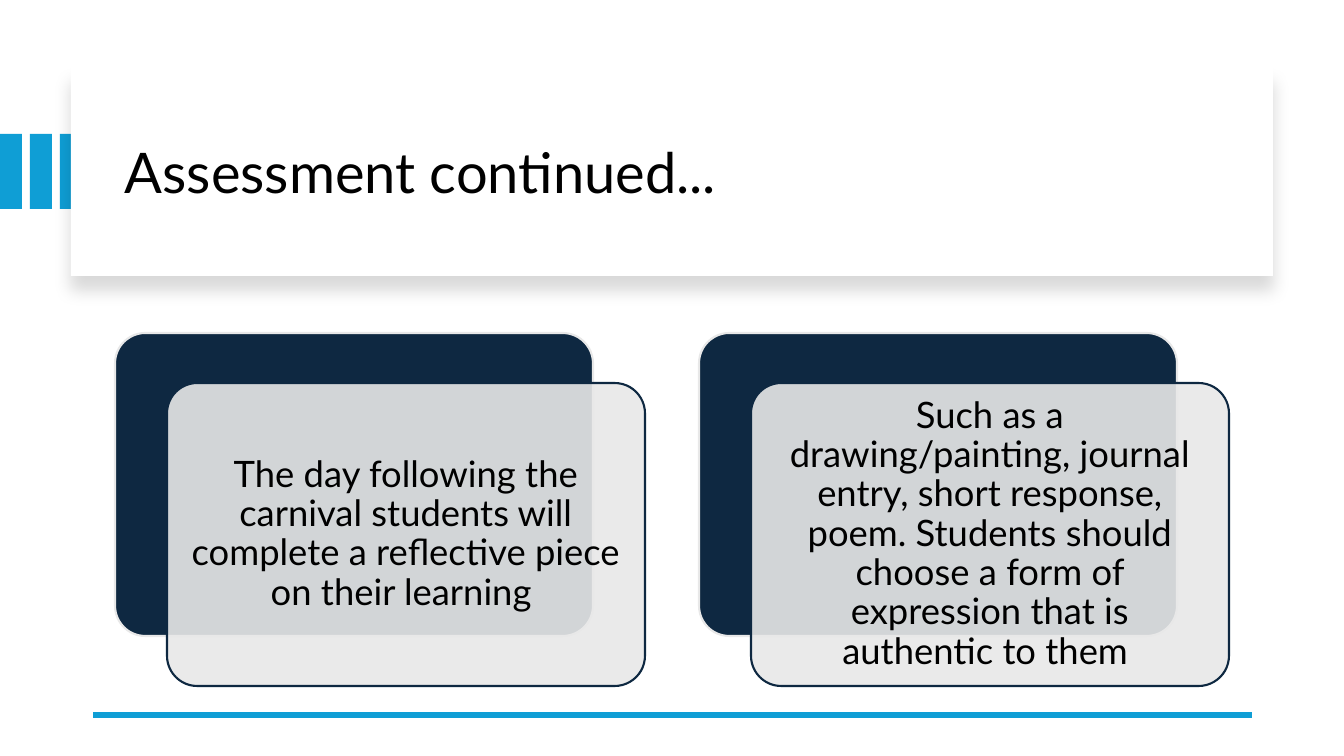
from lxml import etree
from pptx import Presentation
from pptx import util as u
from pptx.dml.color import RGBColor
from pptx.enum import shapes, text
from pptx.oxml.ns import qn

TITLE = "Assessment continued..."
CARDS = [
    "The day following the carnival students will complete a reflective piece on their learning ",
    "Such as a drawing/painting, journal entry, short response, poem. "
    "Students should choose a form of expression that is authentic to them ",
]

THEME = {
    "font": "Lato",
    "accent": "0F9ED5", "navy": "0E2841", "pale": "E8E8E8",
    "panel": "FFFFFF", "ink": "000000",
    "title_size": 40, "card_size": 26, "outline": 1.5, "rule": 4.5,
}

# Lengths in px, 100.8 to the inch
PX = 914400 / 100.8
SLIDE = (1344, 756)
STRIPE_TOP, STRIPE_SIZE, STRIPE_STEP = 134, (22, 75), 30
PANEL = (71, 67, 1202, 209)
TITLE_BOX = (115, 90, 1122, 171)
RULE_LEFT, RULE_RIGHT, RULE_TOP = 93, 1252, 715
CARD_LEFT, CARD_TOP, CARD_SIZE, CARD_STEP = 115, 333, (478, 303), 584
FRONT_SHIFT = (52, 50)
TEXT_INSET, TEXT_MARGIN = 9, 11


def px(length):
    return u.Emu(round(length * PX))


def rgb(name):
    return RGBColor.from_string(THEME[name])


def add_block(slide, kind, box, fill, line=None):
    block = slide.shapes.add_shape(kind, *map(px, box))
    block.shadow.inherit = False
    block.fill.solid()
    block.fill.fore_color.rgb = rgb(fill)
    if line:
        block.line.color.rgb = rgb(line)
        block.line.width = u.Pt(THEME["outline"])
    else:
        block.line.fill.background()
    return block


def add_alpha(color, percent):
    etree.SubElement(color, qn("a:alpha"), val=str(percent * 1000))


def add_drop_shadow(block):
    effects = block._element.spPr.find(qn("a:effectLst"))
    shadow = etree.SubElement(
        effects, qn("a:outerShdw"), blurRad=str(u.Pt(11)), dist=str(u.Pt(10)),
        dir=str(90 * 60000), algn="t", rotWithShape="0")
    add_alpha(etree.SubElement(shadow, qn("a:srgbClr"), val=THEME["ink"]), 15)


def add_words(slide, box, words, size, align, margin=None):
    frame = slide.shapes.add_textbox(*map(px, box)).text_frame
    frame.word_wrap = True
    frame.vertical_anchor = text.MSO_ANCHOR.MIDDLE
    if margin is not None:
        frame.margin_left = frame.margin_right = px(margin)
        frame.margin_top = frame.margin_bottom = px(margin)
    paragraph = frame.paragraphs[0]
    paragraph.text = words
    paragraph.alignment = align
    paragraph.line_spacing = 0.9
    paragraph.font.name = THEME["font"]
    paragraph.font.size = u.Pt(THEME[size])
    paragraph.font.color.rgb = rgb("ink")


def add_card(slide, left, words):
    """Dark rounded card with a translucent one shifted over it."""
    width, height = CARD_SIZE
    x, y = left + FRONT_SHIFT[0], CARD_TOP + FRONT_SHIFT[1]
    rounded = shapes.MSO_SHAPE.ROUNDED_RECTANGLE
    back = add_block(slide, rounded, (left, CARD_TOP, width, height), "navy", "pale")
    front = add_block(slide, rounded, (x, y, width, height), "pale", "navy")
    for card in (back, front):
        card.adjustments[0] = 0.1
    add_alpha(front._element.spPr.find(qn("a:solidFill"))[0], 90)
    inner = (x + TEXT_INSET, y + TEXT_INSET,
             width - 2 * TEXT_INSET, height - 2 * TEXT_INSET)
    add_words(slide, inner, words, "card_size", text.PP_ALIGN.CENTER, TEXT_MARGIN)


def main():
    deck = Presentation()
    deck.slide_width, deck.slide_height = map(px, SLIDE)
    slide = deck.slides.add_slide(deck.slide_layouts[6])
    rectangle = shapes.MSO_SHAPE.RECTANGLE

    for i in range(3):
        add_block(slide, rectangle, (i * STRIPE_STEP, STRIPE_TOP, *STRIPE_SIZE), "accent")
    add_drop_shadow(add_block(slide, rectangle, PANEL, "panel"))
    add_words(slide, TITLE_BOX, TITLE, "title_size", text.PP_ALIGN.LEFT)

    rule = slide.shapes.add_connector(
        shapes.MSO_CONNECTOR.STRAIGHT,
        *map(px, (RULE_RIGHT, RULE_TOP, RULE_LEFT, RULE_TOP)))
    rule.line.color.rgb = rgb("accent")
    rule.line.width = u.Pt(THEME["rule"])
    etree.SubElement(rule._element.spPr, qn("a:effectLst"))

    for i, words in enumerate(CARDS):
        add_card(slide, CARD_LEFT + i * CARD_STEP, words)
    deck.save("out.pptx")


if __name__ == "__main__":
    main()
